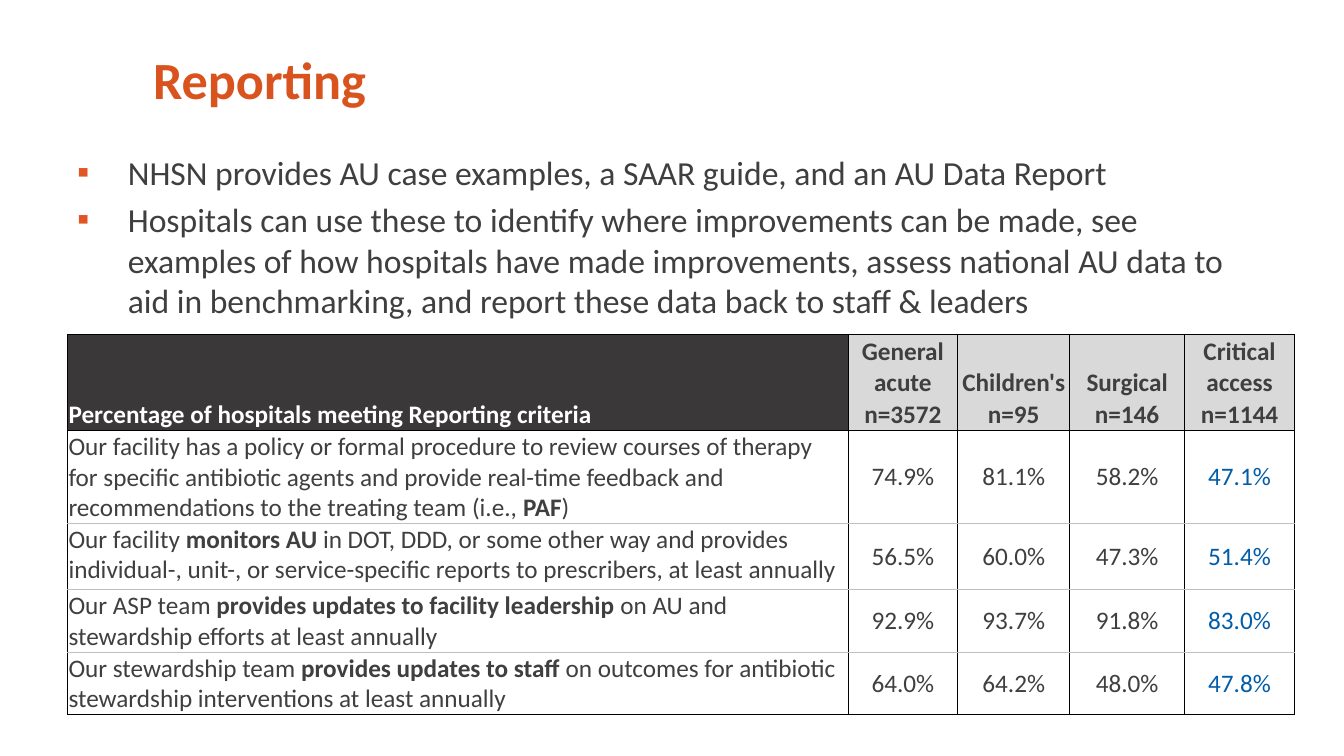
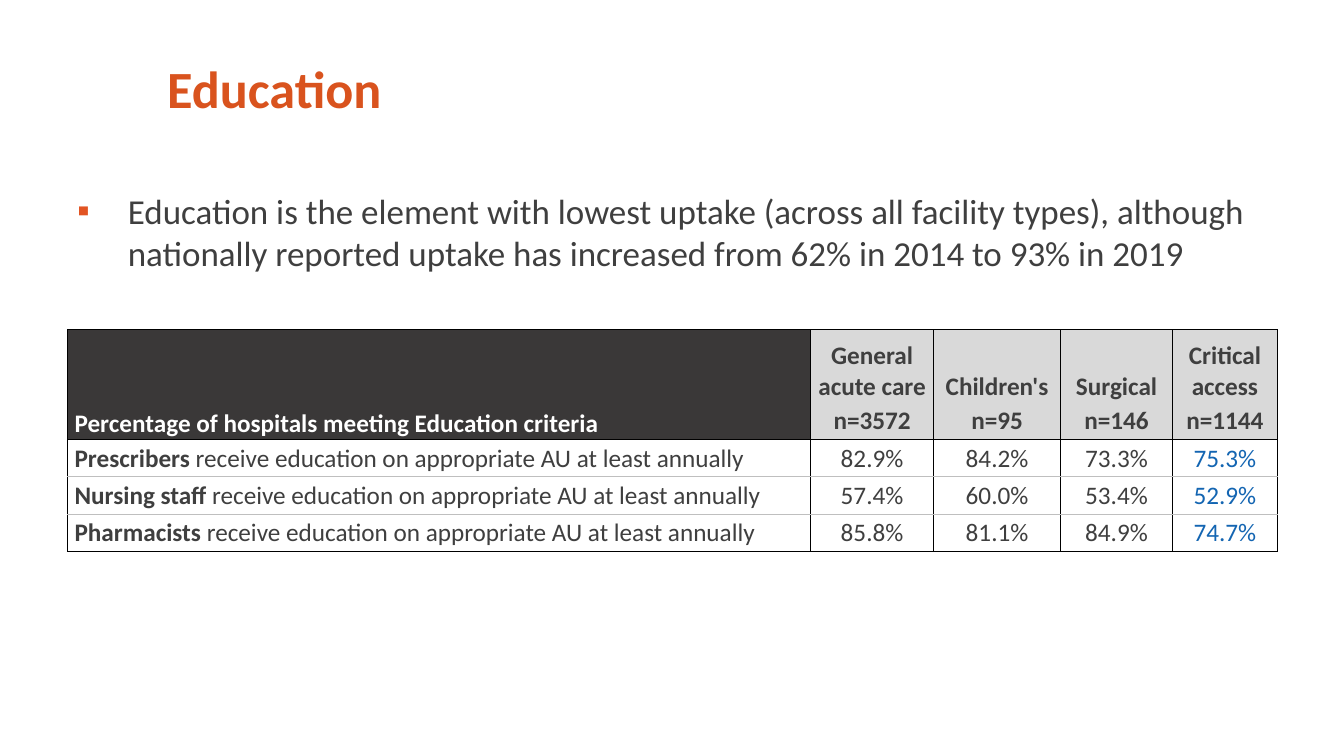
from pptx import Presentation
from pptx.dml.color import RGBColor
from pptx.enum.text import MSO_ANCHOR, PP_ALIGN
from pptx.oxml import parse_xml
from pptx.oxml.ns import nsdecls
from pptx.util import Pt

# Shared look
PX = 9144  # 100 px to the inch
FONT = "Calibri"
RUST, MARK, INK = "D9531E", "E25423", "3F3F3F"
DARK, PALE, WHITE = "3A3838", "D9D9D9", "FFFFFF"
BLACK, GREY = "000000", "BFBFBF"


def px(num):
    return int(num * PX)


def paint(hue):
    return RGBColor.from_string(hue)


def style(para, size, hue, bold=False):
    font = para.font
    font.name, font.size, font.bold = FONT, Pt(size), bold
    font.color.rgb = paint(hue)


def write(para, text):
    """Fill a paragraph; parts between stars are bold."""
    for i, part in enumerate(text.split("*")):
        if part:
            run = para.add_run()
            run.text = part
            if i % 2:
                run.font.bold = True


def frame(slide, box):
    text = slide.shapes.add_textbox(*map(px, box)).text_frame
    text.word_wrap = True
    return text


# Title
def title(slide, box, text):
    body = frame(slide, box)
    body.vertical_anchor = MSO_ANCHOR.BOTTOM
    para = body.paragraphs[0]
    para.line_spacing = Pt(40)
    write(para, text)
    style(para, 37.3, RUST, True)


# Bullet list
def points(slide, box, items, size):
    body = frame(slide, box)
    for i, item in enumerate(items):
        para = body.add_paragraph() if i else body.paragraphs[0]
        if i:
            para.space_before = Pt(size * 0.2)
        props = para._p.get_or_add_pPr()
        props.set("marL", str(px(50)))
        props.set("indent", str(px(-50)))
        props.append(parse_xml(
            f'<a:buClr {nsdecls("a")}><a:srgbClr val="{MARK}"/></a:buClr>'))
        props.append(parse_xml(f'<a:buFont {nsdecls("a")} typeface="{FONT}"/>'))
        props.append(parse_xml(f'<a:buChar {nsdecls("a")} char="▪"/>'))
        write(para, item)
        style(para, size, INK)


# Table cells
def edge(cell, side, hue):
    fill = (f'<a:solidFill><a:srgbClr val="{hue}"/></a:solidFill>'
            if hue else "<a:noFill/>")
    cell._tc.get_or_add_tcPr().append(parse_xml(
        f'<a:ln{side} {nsdecls("a")} w="6350">{fill}</a:ln{side}>'))


def fill(cell, text, back, hue, bold, top, base, anchor, left):
    for side, line in zip("LRTB", (BLACK, BLACK, top, base)):
        edge(cell, side, line)
    cell.fill.solid()
    cell.fill.fore_color.rgb = paint(back)
    cell.margin_left, cell.margin_right = px(left), px(1)
    cell.margin_top, cell.margin_bottom = px(1), 0
    cell.vertical_anchor = anchor
    para = cell.text_frame.paragraphs[0]
    write(para, text)
    style(para, 18, hue, bold)
    return para


# Table with a two-row head, a label column and a tinted last column
def grid(slide, box, cols, rows, data, tint, inset, anchor):
    table = slide.shapes.add_table(len(rows), len(cols), *map(px, box)).table
    table.first_row = table.horz_banding = False
    for col, wide in zip(table.columns, cols):
        col.width = px(wide)
    for row, high in zip(table.rows, rows):
        row.height = px(high)
    last = len(rows) - 1, len(cols) - 1
    for r, line in enumerate(data):
        head = r < 2
        top = (BLACK, None, BLACK)[r] if r < 3 else GREY
        base = None if r == 0 else BLACK if r in (1, last[0]) else GREY
        for c, text in enumerate(line):
            label = c == 0
            back = (DARK if label else PALE) if head else WHITE
            hue = INK
            if head and label:
                hue = WHITE
            elif c == last[1] and not head:
                hue = tint
            hold = MSO_ANCHOR.MIDDLE
            if r == 0:
                hold = MSO_ANCHOR.BOTTOM
            elif label:
                hold = anchor
            para = fill(table.cell(r, c), text, back, hue, head, top, base,
                        hold, inset if label else 1)
            if not label:
                para.alignment = PP_ALIGN.CENTER
    table.cell(0, 0).merge(table.cell(1, 0))


COUNTS = ("", "n=3572", "n=95", "n=146", "n=1144")


def report(slide):
    title(slide, (142, 26, 1120, 88), "Reporting")
    points(slide, (67, 146, 1200, 176), (
        "NHSN provides AU case examples, a SAAR guide, and an AU Data Report",
        "Hospitals can use these to identify where improvements can be made, "
        "see examples of how hospitals have made improvements, assess national "
        "AU data to aid in benchmarking, and report these data back to staff "
        "& leaders"), 24)
    data = (
        ("Percentage of hospitals meeting Reporting criteria",
         "General acute", "Children's", "Surgical", "Critical access"),
        COUNTS,
        ("Our facility has a policy or formal procedure to review courses of "
         "therapy for specific antibiotic agents and provide real-time feedback "
         "and recommendations to the treating team (i.e., *PAF*)",
         "74.9%", "81.1%", "58.2%", "47.1%"),
        ("Our facility *monitors AU *in DOT, DDD, or some other way and provides "
         "individual-, unit-, or service-specific reports to prescribers, at "
         "least annually", "56.5%", "60.0%", "47.3%", "51.4%"),
        ("Our ASP team *provides updates to facility leadership *on AU and "
         "stewardship efforts at least annually",
         "92.9%", "93.7%", "91.8%", "83.0%"),
        ("Our stewardship team *provides updates to staff *on outcomes for "
         "antibiotic stewardship interventions at least annually",
         "64.0%", "64.2%", "48.0%", "47.8%"))
    grid(slide, (67, 332, 1217, 377), (774, 109, 111, 114, 109),
         (63, 32, 92, 66, 62, 62), data, "005DAA", 1, MSO_ANCHOR.TOP)


def teach(slide):
    title(slide, (156, 43, 1139, 80), "Education")
    points(slide, (67, 183, 1200, 204), (
        "Education is the element with lowest uptake (across all facility "
        "types), although nationally reported uptake has increased from 62% "
        "in 2014 to 93% in 2019",), 25)
    ending = " receive education on appropriate AU at least annually"
    data = (
        ("Percentage of hospitals meeting Education criteria",
         "General acute care", "Children's", "Surgical", "Critical access"),
        COUNTS,
        ("*Prescribers*" + ending, "82.9%", "84.2%", "73.3%", "75.3%"),
        ("*Nursing staff*" + ending, "57.4%", "60.0%", "53.4%", "52.9%"),
        ("*Pharmacists*" + ending, "85.8%", "81.1%", "84.9%", "74.7%"))
    grid(slide, (67, 327, 1200, 220), (737, 122, 126, 111, 104),
         (72, 37, 37, 37, 37), data, "1365B2", 7, MSO_ANCHOR.MIDDLE)


def main():
    deck = Presentation()
    deck.slide_width, deck.slide_height = px(1333), px(750)
    for make in (report, teach):
        make(deck.slides.add_slide(deck.slide_layouts[6]))
    deck.save("out.pptx")


if __name__ == "__main__":
    main()
